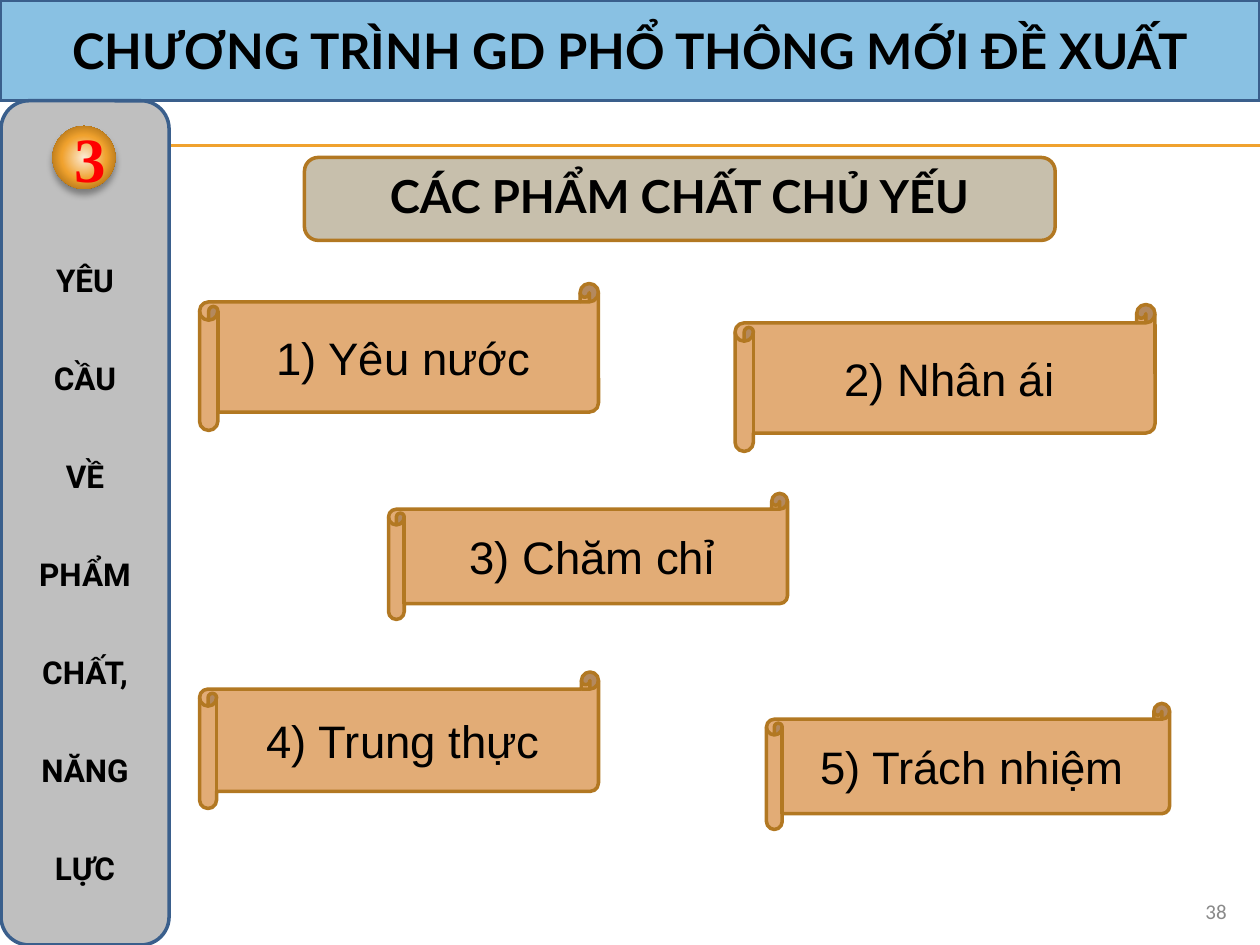
import pptx
import pptx.util
import pptx.dml.color
import pptx.enum.shapes
import pptx.enum.text
import pptx.oxml
import pptx.oxml.ns
from dataclasses import dataclass

Shape = pptx.enum.shapes.MSO_SHAPE
Align = pptx.enum.text.PP_ALIGN
Anchor = pptx.enum.text.MSO_ANCHOR
NS = pptx.oxml.ns.nsdecls("a")


@dataclass(frozen=True)
class Theme:
    sky: str = "89C1E3"
    navy: str = "3A5F8C"
    gray: str = "BFBFBF"
    sand: str = "C7BFAC"
    peach: str = "E2AC76"
    brown: str = "B27822"
    gold: str = "F0A22E"
    cream: str = "FCECD5"
    dark: str = "85540A"
    ink: str = "000000"
    red: str = "FF0000"
    pale: str = "898989"
    # Type sizes in points
    title: int = 28
    body: int = 26
    side: int = 18
    digit: int = 36
    small: int = 12


class Board:
    """Holds the theme and the slide; lengths are cells of a 120 x 90 grid."""

    def __init__(self, deck, theme):
        self.theme = theme
        self.cell = deck.slide_width / 120
        self.slide = deck.slides.add_slide(deck.slide_layouts[6])

    def span(self, *cells):
        return [pptx.util.Emu(round(n * self.cell)) for n in cells]

    def color(self, code):
        return pptx.dml.color.RGBColor.from_string(code)

    def letter(self, shape, lines, size, face, ink=Theme.ink, bold=False,
               align=Align.CENTER, anchor=Anchor.MIDDLE, lead=None, gap=0):
        frame = shape.text_frame
        frame.word_wrap = True
        frame.vertical_anchor = anchor
        for i, line in enumerate(lines):
            para = frame.add_paragraph() if i else frame.paragraphs[0]
            para.alignment = align
            if lead:
                para.line_spacing = lead
            if i and gap:
                para.space_before = pptx.util.Pt(gap)
            run = para.add_run()
            run.text = line
            run.font.size = pptx.util.Pt(size)
            run.font.name = face
            run.font.bold = bold
            run.font.color.rgb = self.color(ink)

    def panel(self, kind, place, fill, edge):
        shape = self.slide.shapes.add_shape(kind, *self.span(*place))
        shape.shadow.inherit = False
        shape.fill.solid()
        shape.fill.fore_color.rgb = self.color(fill)
        shape.line.color.rgb = self.color(edge)
        shape.line.width = pptx.util.Pt(2)
        return shape

    def rule(self, left, right, row):
        a, b, y = self.span(left, right, row)
        line = self.slide.shapes.add_connector(
            pptx.enum.shapes.MSO_CONNECTOR.STRAIGHT, a, y, b, y)
        line.line.color.rgb = self.color(self.theme.gold)
        line.line.width = pptx.util.Pt(0.75)
        line._element.spPr.append(pptx.oxml.parse_xml(f"<a:effectLst {NS}/>"))

    def scroll(self, place, text):
        shape = self.panel(Shape.HORIZONTAL_SCROLL, place,
                           self.theme.peach, self.theme.brown)
        self.letter(shape, [text], self.theme.body, "Arial")

    def badge(self, place, text):
        look = self.theme
        ball = self.slide.shapes.add_shape(Shape.OVAL, *self.span(*place))
        ball.line.fill.background()
        stops = "".join(
            f'<a:gs pos="{pos}000"><a:srgbClr val="{code}"/></a:gs>'
            for pos, code in ((0, look.cream), (50, look.gold), (100, look.dark)))
        props = ball._element.spPr
        # Radial fill goes right after the geometry, the shadow at the end
        props.insert(2, pptx.oxml.parse_xml(
            f'<a:gradFill {NS} rotWithShape="1"><a:gsLst>{stops}</a:gsLst>'
            '<a:path path="circle"><a:fillToRect l="50000" t="50000" '
            'r="50000" b="50000"/></a:path></a:gradFill>'))
        props.append(pptx.oxml.parse_xml(
            f'<a:effectLst {NS}><a:outerShdw blurRad="50800" dist="38100" '
            'dir="5400000" rotWithShape="0"><a:srgbClr val="000000">'
            '<a:alpha val="35000"/></a:srgbClr></a:outerShdw></a:effectLst>'))
        self.letter(ball, [text], look.digit, "Times New Roman", look.red,
                    bold=True, align=Align.LEFT)

    def label(self, place, text):
        box = self.slide.shapes.add_textbox(*self.span(*place))
        self.letter(box, [text], self.theme.small, "Calibri", self.theme.pale,
                    align=Align.RIGHT, anchor=Anchor.TOP)


def main():
    deck = pptx.Presentation()
    deck.slide_width = pptx.util.Inches(10)
    deck.slide_height = pptx.util.Inches(7.5)
    look = Theme()
    board = Board(deck, look)

    # Double rule under the banner
    for row in (13.8, 13.9):
        board.rule(6.7, 120, row)

    # Banner
    top = board.panel(Shape.RECTANGLE, (0, 0, 120, 9.6), look.sky, look.navy)
    board.letter(top, ["CHƯƠNG TRÌNH GD PHỔ THÔNG MỚI ĐỀ XUẤT"],
                 look.title, "Lato", bold=True)

    # Sidebar, with room at the top for the badge
    side = board.panel(Shape.ROUNDED_RECTANGLE, (0.1, 9.6, 16, 80.4),
                       look.gray, look.navy)
    frame = side.text_frame
    frame.margin_left = frame.margin_right = 0
    frame.margin_top = pptx.util.Inches(0.77)
    board.letter(side, ["YÊU", "CẦU", "VỀ", "PHẨM", "CHẤT,", "NĂNG", "LỰC"],
                 look.side, "Roboto", bold=True, lead=1.3, gap=28)
    board.badge((5, 12, 6, 6), "3")

    # Heading
    head = board.panel(Shape.ROUNDED_RECTANGLE, (29, 15, 71.5, 7.9),
                       look.sand, look.brown)
    board.letter(head, ["CÁC PHẨM CHẤT CHỦ YẾU"], look.body, "Lato",
                 bold=True, lead=0.9)

    # Five qualities
    for place, text in (
        ((19, 27, 38, 14), "1) Yêu nước"),
        ((70, 29, 40, 14), "2) Nhân ái"),
        ((37, 47, 38, 12), "3) Chăm chỉ"),
        ((19, 64, 38, 13), "4) Trung thực"),
        ((73, 67, 38.4, 12), "5) Trách nhiệm"),
    ):
        board.scroll(place, text)

    # Page number
    board.label((108, 85, 10, 3.2), "38")
    deck.save("out.pptx")


if __name__ == "__main__":
    main()
